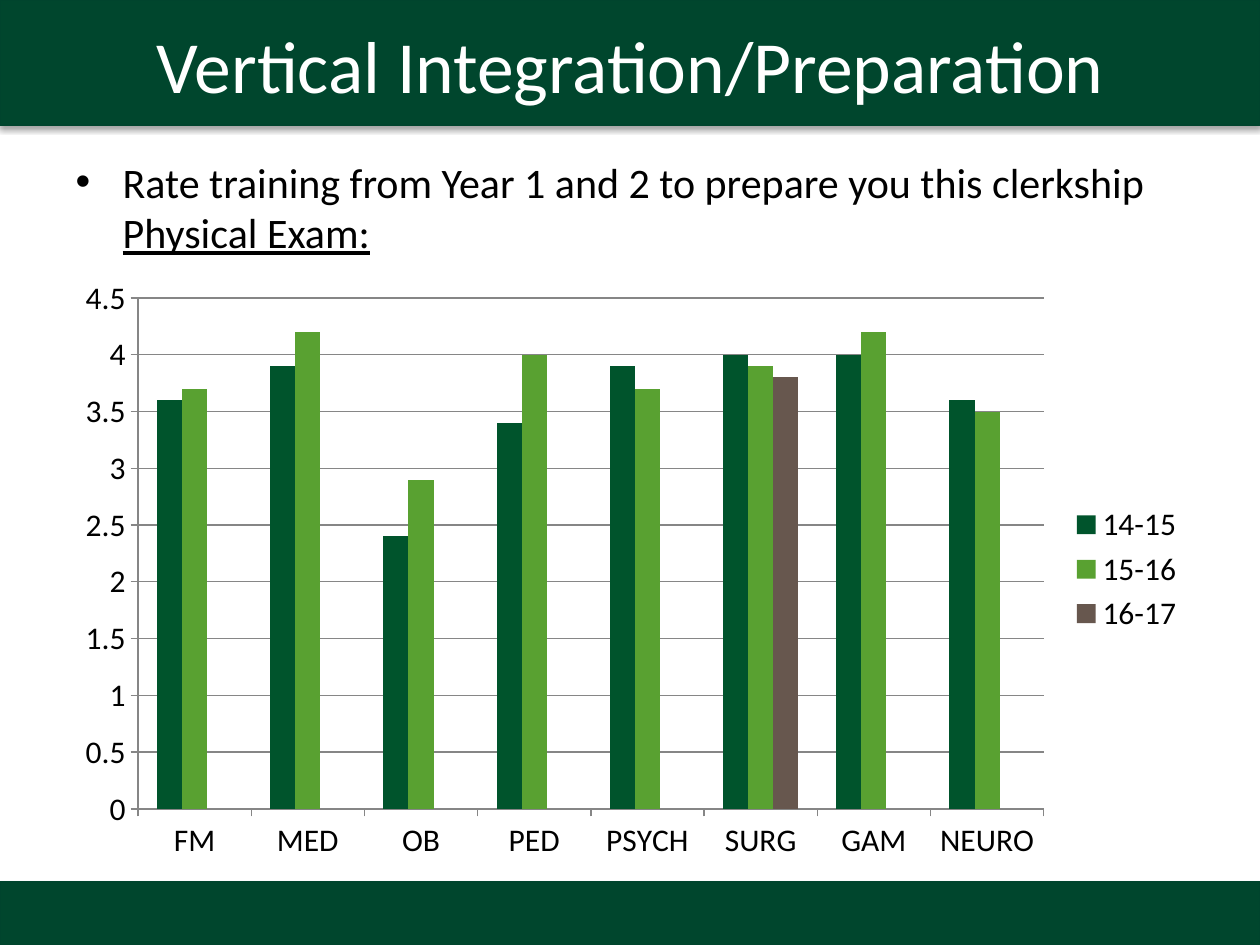
"""Build the slide on vertical integration with clerkship ratings by year."""
from dataclasses import dataclass

from lxml import etree
from pptx import Presentation
from pptx.chart import data
from pptx.dml.color import RGBColor
from pptx.enum import chart as charts, shapes, text
from pptx.oxml import ns
from pptx.util import Cm, Pt


@dataclass(frozen=True)
class Theme:
    font: str = "Calibri"
    band: str = "00462D"
    band_line: str = "00442D"
    light: str = "FFFFFF"
    dark: str = "000000"
    grid: str = "868686"
    series: tuple = ("00542C", "59A131", "67574E")
    title_size: int = 42
    body_size: int = 24
    chart_size: int = 18


def set_font(font, size, color):
    font.name = theme.font
    font.size = Pt(size)
    font.color.rgb = RGBColor.from_string(color)


def add_element(parent, tag, **attributes):
    return etree.SubElement(parent, ns.qn(tag), attributes)


theme = Theme()
deck = Presentation()
deck.slide_width, deck.slide_height = Cm(25.4), Cm(19.05)
page = deck.slides.add_slide(deck.slide_layouts[1])

for position, (top, height) in enumerate([(0, 2.52), (17.78, 1.27)], start=2):
    band = page.shapes.add_shape(
        shapes.MSO_SHAPE.RECTANGLE, 0, Cm(top), deck.slide_width, Cm(height))
    band.fill.solid()
    band.fill.fore_color.rgb = RGBColor.from_string(theme.band)
    band.line.color.rgb = RGBColor.from_string(theme.band_line)
    band.line.width = Pt(0.75)
    band.shadow.inherit = False
    effects = band.element.spPr.find(ns.qn("a:effectLst"))
    shadow = add_element(effects, "a:outerShdw", blurRad=str(Pt(3.1)),
                         dist=str(Pt(1.8)), dir="5400000", rotWithShape="0")
    shade = add_element(shadow, "a:srgbClr", val=theme.dark)
    add_element(shade, "a:alpha", val="35000")
    band.element.getparent().insert(position, band.element)

title = page.shapes.title
title.left, title.top, title.width, title.height = Cm(0.48), Cm(0.03), Cm(24.46), Cm(2.51)
title.text_frame.text = "Vertical Integration/Preparation"
title.text_frame.auto_size = text.MSO_AUTO_SIZE.NONE
title.text_frame.vertical_anchor = text.MSO_ANCHOR.MIDDLE
para = title.text_frame.paragraphs[0]
para.alignment = text.PP_ALIGN.CENTER
set_font(para.runs[0].font, theme.title_size, theme.light)

body = page.placeholders[1]
body.left, body.top, body.width, body.height = Cm(1.27), Cm(3.02), Cm(22.86), Cm(14.22)
body.text_frame.text = "Rate training from Year 1 and 2 to prepare you this clerkship "
body.text_frame.auto_size = text.MSO_AUTO_SIZE.NONE
para = body.text_frame.paragraphs[0]
para.space_before = Pt(0)
properties = para._p.get_or_add_pPr()
properties.set("marL", str(Cm(0.95)))
properties.set("indent", str(-Cm(0.95)))
add_element(properties, "a:buFont", typeface="Arial")
add_element(properties, "a:buChar", char="•")
topic = para.add_run()
topic.text = "Physical Exam:"
topic.font.underline = True
for span in para.runs:
    set_font(span.font, theme.body_size, theme.dark)

ratings = data.CategoryChartData()
ratings.categories = ["FM", "MED", "OB", "PED", "PSYCH", "SURG", "GAM", "NEURO"]
ratings.add_series("14-15", [3.6, 3.9, 2.4, 3.4, 3.9, 4, 4, 3.6])
ratings.add_series("15-16", [3.7, 4.2, 2.9, 4, 3.7, 3.9, 4.2, 3.5])
ratings.add_series("16-17", [None] * 5 + [3.8] + [None] * 2)
chart = page.shapes.add_chart(
    charts.XL_CHART_TYPE.COLUMN_CLUSTERED,
    Cm(1.27), Cm(5.38), Cm(22.86), Cm(12.19), ratings).chart
set_font(chart.font, theme.chart_size, theme.dark)
chart.has_title = False
chart.has_legend = True
chart.legend.position = charts.XL_LEGEND_POSITION.RIGHT
chart.legend.include_in_layout = False

plot = chart.plots[0]
plot.gap_width = 150
plot.overlap = 0
plot.vary_by_categories = False
for series, color in zip(plot.series, theme.series):
    series.format.fill.solid()
    series.format.fill.fore_color.rgb = RGBColor.from_string(color)

values = chart.value_axis
values.minimum_scale, values.maximum_scale, values.major_unit = 0, 4.5, 0.5
values.has_major_gridlines = True
for axis in (chart.category_axis, values):
    axis.major_tick_mark = charts.XL_TICK_MARK.OUTSIDE
    axis.minor_tick_mark = charts.XL_TICK_MARK.NONE
    axis.tick_labels.number_format = "General"
    axis.tick_labels.number_format_is_linked = False
for ruled in (chart.category_axis, values, values.major_gridlines):
    ruled.format.line.color.rgb = RGBColor.from_string(theme.grid)
    ruled.format.line.width = Pt(0.75)

deck.save("out.pptx")
